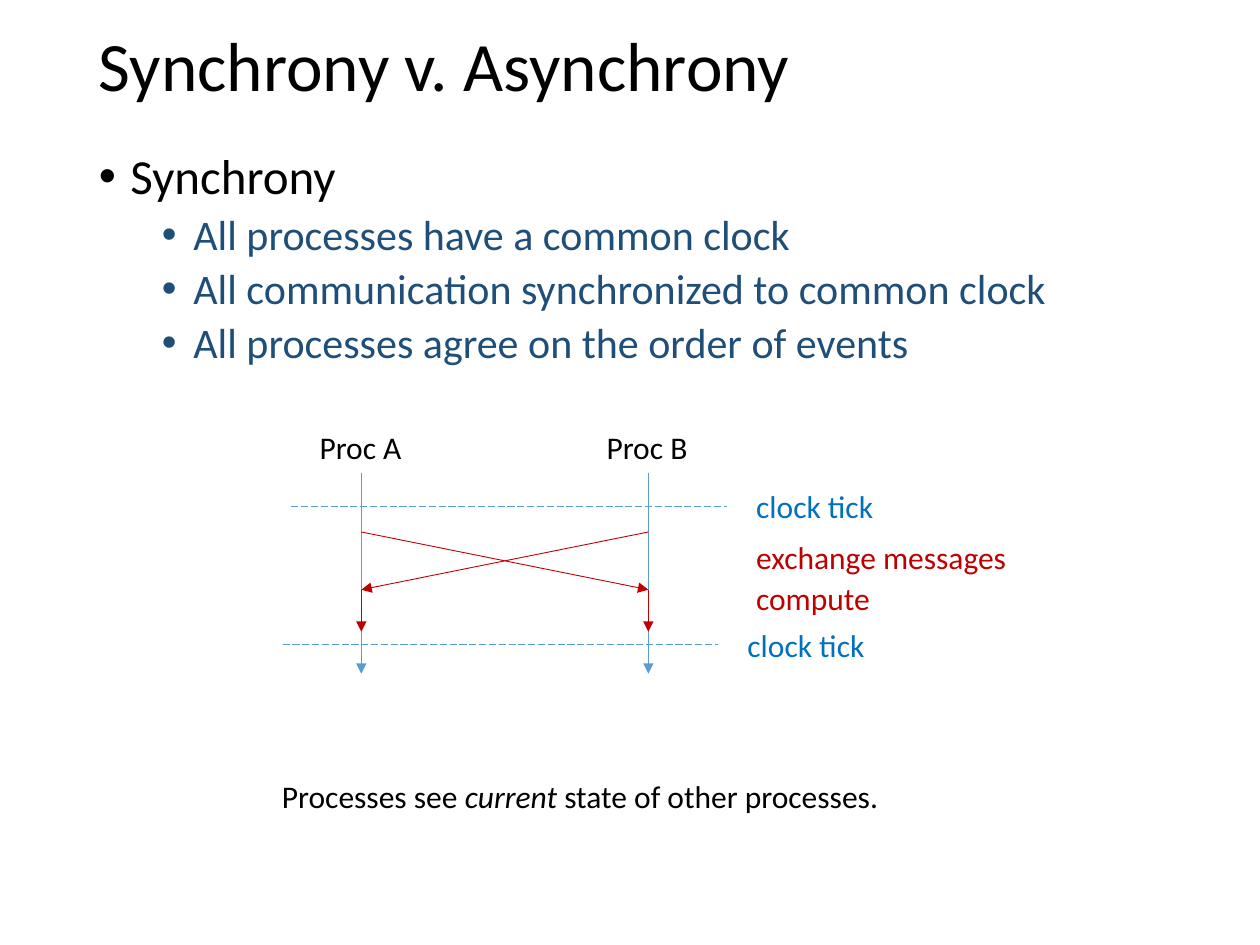
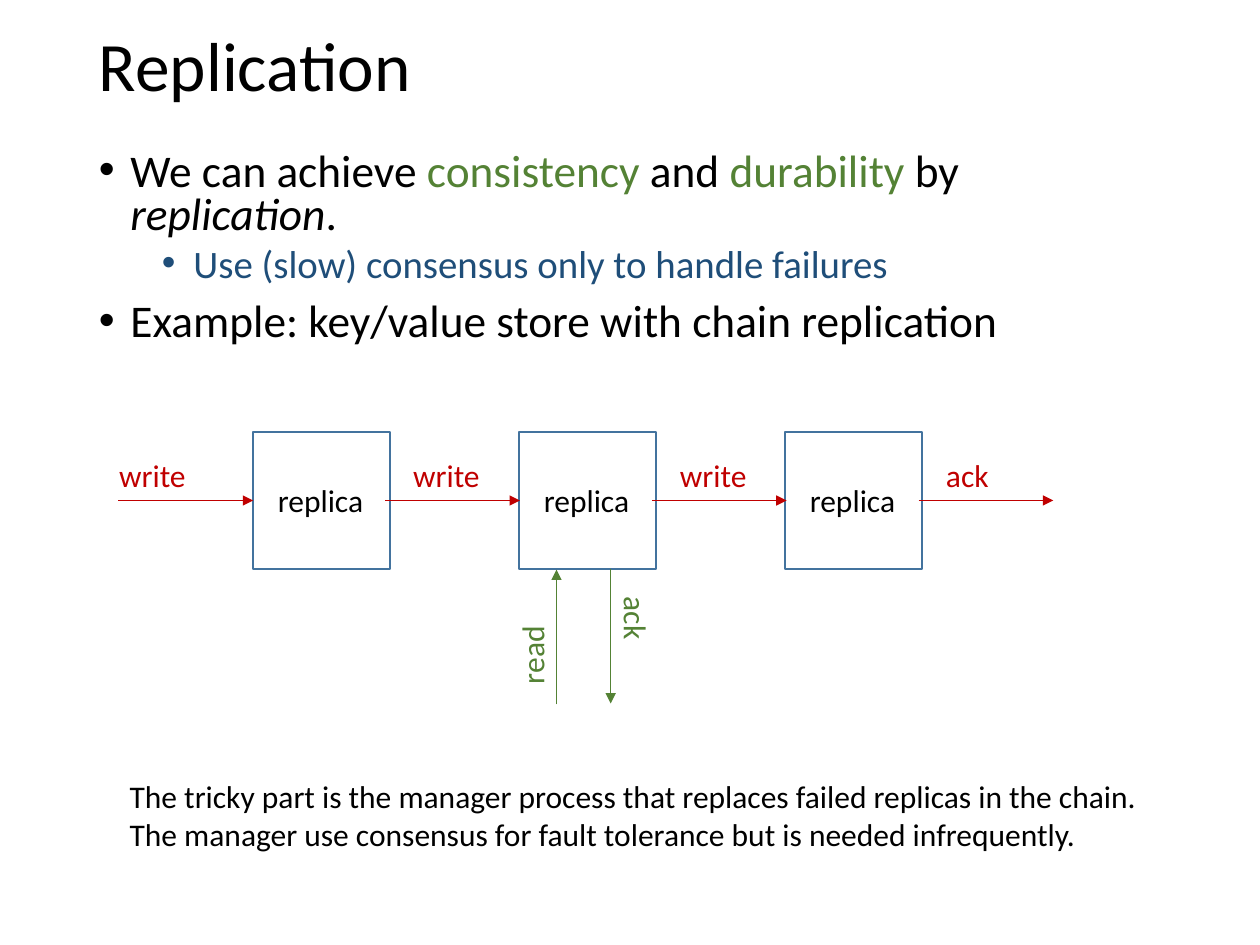
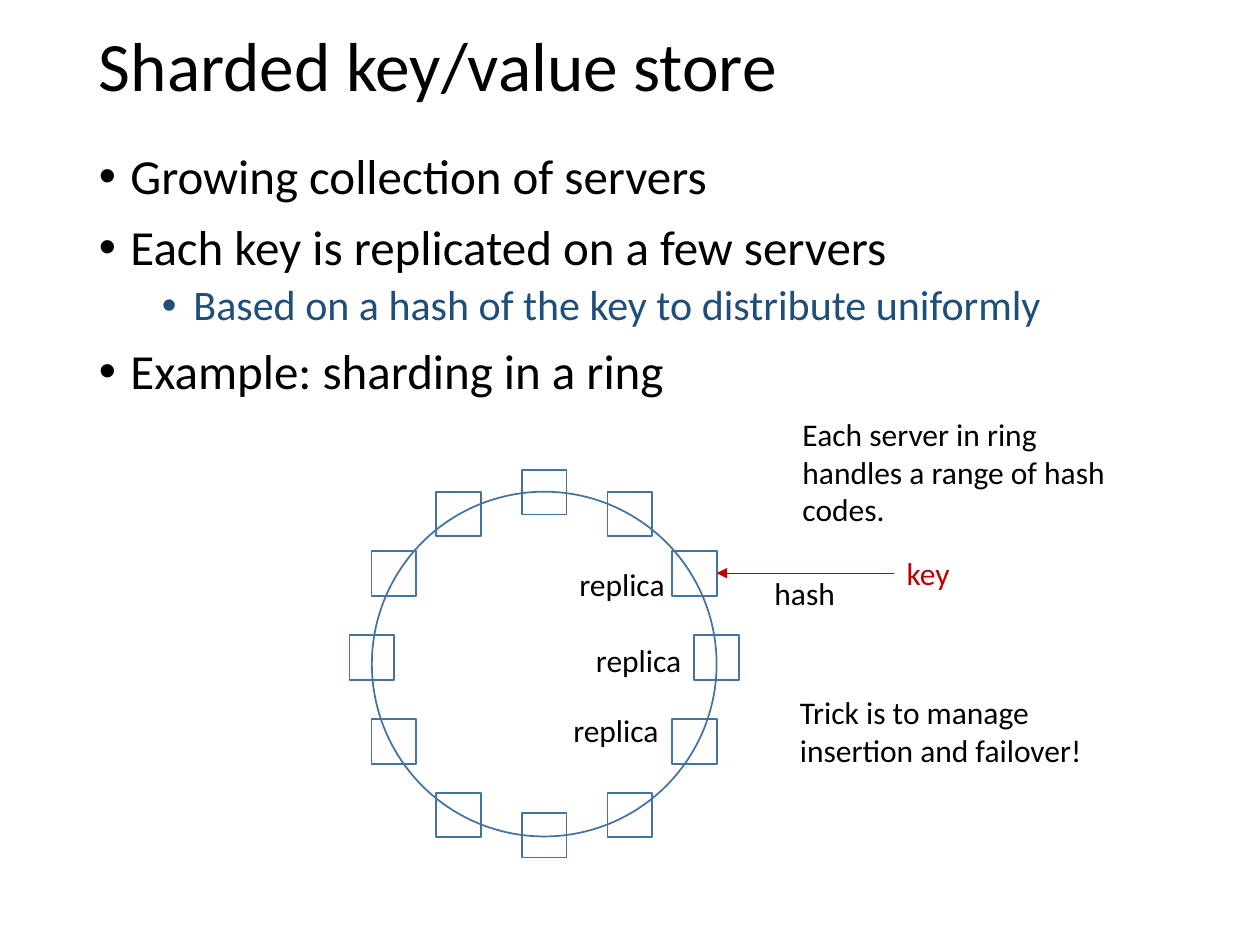
from dataclasses import dataclass
from itertools import repeat

from lxml.etree import SubElement
from pptx import Presentation
from pptx.dml.color import RGBColor
from pptx.enum.dml import MSO_LINE
from pptx.enum.shapes import MSO_CONNECTOR, MSO_SHAPE
from pptx.enum.text import MSO_ANCHOR
from pptx.oxml.ns import qn
from pptx.util import Pt


@dataclass(frozen=True)
class Theme:
    font: str = "Calibri"
    black: str = "000000"
    navy: str = "1F4E79"
    blue: str = "0070C0"
    sky: str = "5B9BD5"
    steel: str = "43739E"
    red: str = "C00000"
    green: str = "548235"
    title_size: float = 39.6
    label_size: float = 18
    body_sizes: tuple = (28, 24)
    tight_sizes: tuple = (25.9, 22.2)


THEME = Theme()
BLACK, NAVY, RED, GREEN = THEME.black, THEME.navy, THEME.red, THEME.green
LABEL_HEIGHT = 29


def add_text(slide, box, *paragraphs, sizes=repeat(THEME.label_size), wrap=False):
    """Add a text box; each paragraph is a list of (text, colour[, italic]) runs."""
    text_box = slide.shapes.add_textbox(*map(Pt, box))
    frame = text_box.text_frame
    frame.word_wrap = wrap
    for index, (runs, size) in enumerate(zip(paragraphs, sizes)):
        paragraph = frame.add_paragraph() if index else frame.paragraphs[0]
        for text, color, *italic in runs:
            run = paragraph.add_run()
            run.text = text
            run.font.name = THEME.font
            run.font.size = Pt(size)
            run.font.color.rgb = RGBColor.from_string(color)
            run.font.italic = bool(italic)
    return text_box


def add_line(slide, start, end, color, dashed=False):
    """Add a thin arrow, or a dashed line without an arrowhead."""
    line = slide.shapes.add_connector(MSO_CONNECTOR.STRAIGHT, *map(Pt, start + end))
    line.line.color.rgb = RGBColor.from_string(color)
    line.line.width = Pt(0.5)
    if dashed:
        line.line.dash_style = MSO_LINE.LONG_DASH
    else:
        SubElement(line.line._ln, qn("a:tailEnd"), type="triangle")
    SubElement(line._element.spPr, qn("a:effectLst"))


prs = Presentation()
prs.slide_width, prs.slide_height = Pt(720), Pt(540)

# Titles and bullets: title, sizes by level, line spacing, body height, (level, runs)
outline = [
    ("Synchrony v. Asynchrony", THEME.body_sizes, 0.9, 136, [
        (0, [("Synchrony", BLACK)]),
        (1, [("All processes have a common clock", NAVY)]),
        (1, [("All communication synchronized to common clock", NAVY)]),
        (1, [("All processes agree on the order of events", NAVY)]),
    ]),
    ("Replication", THEME.tight_sizes, 0.8, 126, [
        (0, [("We can achieve ", BLACK), ("consistency", GREEN), (" and ", BLACK),
             ("durability", GREEN), (" by ", BLACK), ("replication", BLACK, "italic"),
             (".", BLACK)]),
        (1, [("Use (slow) consensus only to handle failures", NAVY)]),
        (0, [("Example: key/value store with chain replication", BLACK)]),
    ]),
    ("Sharded key/value store", THEME.body_sizes, 0.9, 149, [
        (0, [("Growing collection of servers", BLACK)]),
        (0, [("Each key is replicated on a few servers", BLACK)]),
        (1, [("Based on a hash of the key to distribute uniformly", NAVY)]),
        (0, [("Example: sharding in a ring", BLACK)]),
    ]),
]
slides = []
for title, level_sizes, spacing, body_height, bullets in outline:
    slide = prs.slides.add_slide(prs.slide_layouts[6])
    slides.append(slide)
    heading = add_text(slide, (49.5, 13, 620.5, 52.5), [(title, BLACK)],
                       sizes=[THEME.title_size], wrap=True).text_frame
    heading.vertical_anchor = MSO_ANCHOR.MIDDLE
    heading.paragraphs[0].line_spacing = 0.9

    body = add_text(slide, (49.5, 83.5, 620.5, body_height),
                    *[runs for level, runs in bullets],
                    sizes=[level_sizes[level] for level, runs in bullets], wrap=True)
    for (level, runs), paragraph in zip(bullets, body.text_frame.paragraphs):
        paragraph.level = level
        paragraph.line_spacing = spacing
        paragraph.space_before = Pt((10, 5)[level])
        props = paragraph._p.get_or_add_pPr()
        props.set("marL", str(Pt((18, 54)[level])))
        props.set("indent", str(Pt(-18)))
        SubElement(props, qn("a:buFont"), typeface="Arial")
        SubElement(props, qn("a:buChar"), char="•")
synchrony, replication, sharding = slides

# Synchrony: two processes exchanging messages between clock ticks
proc_a, proc_b = 206.5, 370.5
sent, received, computed = 304, 337, 361
for name, x in (("Proc A", proc_a), ("Proc B", proc_b)):
    add_text(synchrony, (x - 31, 241, 62, LABEL_HEIGHT), [(name, BLACK)])
    add_line(synchrony, (x, 270), (x, 385), THEME.sky)
for tick_left, tick_y in ((166.5, 289.5), (161.5, 368.5)):
    add_line(synchrony, (tick_left, tick_y), (tick_left + 249, tick_y), THEME.sky, dashed=True)
    add_text(synchrony, (tick_left + 258.5, tick_y - 14.5, 82, LABEL_HEIGHT),
             [("clock tick", THEME.blue)])
for sender, receiver in ((proc_a, proc_b), (proc_b, proc_a)):
    add_line(synchrony, (sender, sent), (receiver, received), RED)
    add_line(synchrony, (receiver, received), (receiver, computed), RED)
for step, top, width in (("exchange messages", 304, 159), ("compute", 327.5, 80.5)):
    add_text(synchrony, (425, top, width, LABEL_HEIGHT), [(step, RED)])
add_text(synchrony, (154, 440.5, 369.5, LABEL_HEIGHT),
         [("Processes see ", BLACK), ("current", BLACK, "italic"),
          (" state of other processes.", BLACK)])

# Replication: a chain of replicas
outlined = []
replica_size, chain_y = 78, 286
for index in range(3):
    left = 144.7 + 152 * index
    outlined.append(replication.shapes.add_shape(
        MSO_SHAPE.RECTANGLE, Pt(left), Pt(chain_y - replica_size / 2),
        Pt(replica_size), Pt(replica_size)))
    add_text(replication, (left + 7, 271.5, 64, LABEL_HEIGHT), [("replica", BLACK)])
for index, (message, label_left, width) in enumerate(
        [("write", 61, 53), ("write", 229, 53), ("write", 381.5, 53), ("ack", 533.5, 39)]):
    left = 67.7 + 152.4 * index
    add_line(replication, (left, chain_y), (left + 77, chain_y), RED)
    add_text(replication, (label_left, 257, width, LABEL_HEIGHT), [(message, RED)])
for message, x, start_y, end_y, label_left, label_top, width, rotation in (
        ("read", 318, 402.5, 325.5, 280, 359.5, 48, 270),
        ("ack", 349, 325, 402, 344, 339, 39, 90)):
    add_line(replication, (x, start_y), (x, end_y), GREEN)
    add_text(replication, (label_left, label_top, width, LABEL_HEIGHT),
             [(message, GREEN)]).rotation = rotation
add_text(replication, (67, 440.5, 601, 51),
         [("The tricky part is the manager process that replaces failed replicas in the "
           "chain. The manager use consensus for fault tolerance but is needed "
           "infrequently.", BLACK)], wrap=True)

# Sharding: servers placed symmetrically around a ring
ring_x, ring_top, ring_size, server_size = 311, 281, 197, 25.5
outlined.append(sharding.shapes.add_shape(
    MSO_SHAPE.OVAL, Pt(ring_x - ring_size / 2), Pt(ring_top), Pt(ring_size), Pt(ring_size)))
for server_top, offset in ((268.5, 0), (281, 49), (315, 86), (363, 98.5),
                           (411, 86), (453, 49), (464.5, 0)):
    for server_x in {ring_x - offset, ring_x + offset}:
        outlined.append(sharding.shapes.add_shape(
            MSO_SHAPE.RECTANGLE, Pt(server_x - server_size / 2), Pt(server_top),
            Pt(server_size), Pt(server_size)))
add_line(sharding, (511, 327.5), (409.5, 327.5), RED)
for label, color, left, top, width in (
        ("key", RED, 511, 313, 39.5), ("hash", BLACK, 435.5, 324.5, 49.5),
        ("replica", BLACK, 324, 319.5, 64), ("replica", BLACK, 333.5, 363, 64),
        ("replica", BLACK, 320.5, 402.5, 64)):
    add_text(sharding, (left, top, width, LABEL_HEIGHT), [(label, color)])
for remark, box in (
        ("Each server in ring handles a range of hash codes.", (451.5, 233.5, 197, 72.5)),
        ("Trick is to manage insertion and failover!", (450, 392.5, 205, 51))):
    add_text(sharding, box, [(remark, BLACK)], wrap=True)

for shape in outlined:
    shape.fill.background()
    shape.line.color.rgb = RGBColor.from_string(THEME.steel)
    shape.line.width = Pt(1)
    shape.shadow.inherit = False

prs.save("out.pptx")
